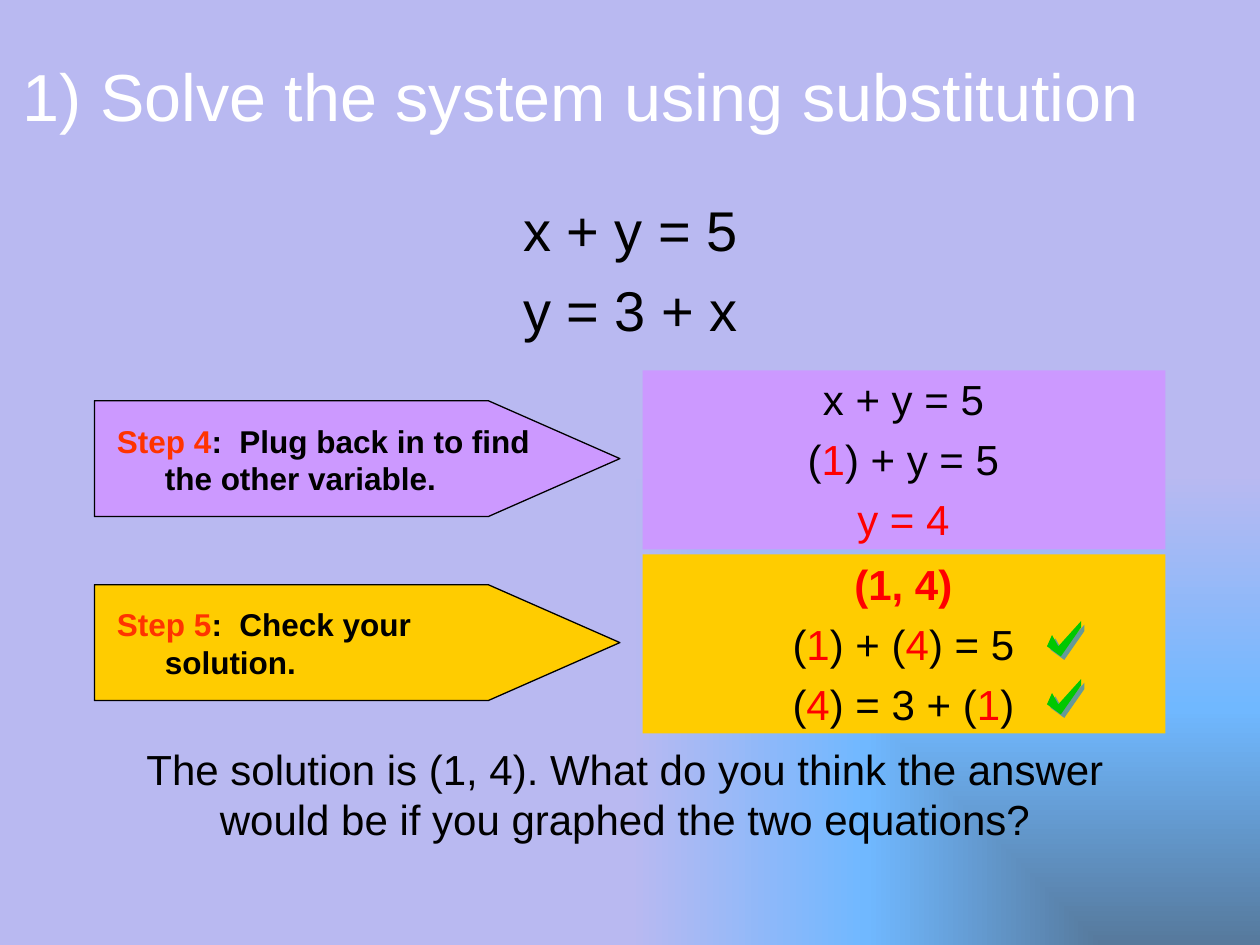
from dataclasses import dataclass

from lxml import etree
from pptx import Presentation
from pptx import util as u
from pptx.dml.color import RGBColor
from pptx.enum import shapes, text
from pptx.oxml.ns import qn

COLORS = {
    "black": "000000", "white": "FFFFFF", "red": "FF0000", "orange": "FF3300",
    "purple": "CC99FF", "gold": "FFCC00", "green": "00C800", "shadow": "669999",
    "slate": "56799C", "sky": "70B8FF", "lilac": "B9B9F1",
}
CHECK = [(0.04, 0.11), (0, 0.2), (0.11, 0.28), (0.27, 0.05), (0.27, 0), (0.09, 0.2)]
MIDDLE = text.MSO_ANCHOR.MIDDLE
TOP = text.MSO_ANCHOR.TOP
CENTER = text.PP_ALIGN.CENTER
LEFT = text.PP_ALIGN.LEFT


@dataclass
class Run:
    words: str
    color: str = "black"
    bold: bool = False


@dataclass
class TextBlock:
    box: tuple[float, float, float, float]
    lines: list[list[Run]]
    size: float
    anchor: text.MSO_ANCHOR = MIDDLE
    align: text.PP_ALIGN = CENTER
    indent: float = 0
    spaced: bool = False


@dataclass
class Step:
    top: float
    color: str
    label: str
    action: str
    work: TextBlock


def rgb(name: str) -> RGBColor:
    """Return the named colour."""
    return RGBColor.from_string(COLORS[name])


def inches(values: tuple) -> list[u.Length]:
    """Convert numbers to lengths."""
    return [u.Inches(v) for v in values]


def apply(target: object, values: dict) -> None:
    """Set each attribute of the target."""
    for name, value in values.items():
        setattr(target, name, value)


def color_node(parent: etree._Element, name: str) -> None:
    """Append a colour element."""
    etree.SubElement(parent, qn("a:srgbClr"), val=COLORS[name])


def add_background(s) -> None:
    """Fill the background with a gradient from the bottom right corner."""
    s.background.fill.gradient()
    grad = s.element.find(".//" + qn("a:gradFill"))
    for child in list(grad):
        grad.remove(child)
    stops = etree.SubElement(grad, qn("a:gsLst"))
    for pos, name in ((0, "slate"), (50, "sky"), (100, "lilac")):
        color_node(etree.SubElement(stops, qn("a:gs"), pos=str(pos * 1000)), name)
    rect = etree.SubElement(grad, qn("a:path"), {"path": "rect"})
    etree.SubElement(rect, qn("a:fillToRect"), l="100000", t="100000")


def add_text(s, block: TextBlock) -> None:
    """Add a text box with formatted runs."""
    tf = s.shapes.add_textbox(*inches(block.box)).text_frame
    apply(tf, {"word_wrap": True, "vertical_anchor": block.anchor})
    for i, line in enumerate(block.lines):
        p = tf.paragraphs[0] if i == 0 else tf.add_paragraph()
        space = u.Pt(round(block.size * 0.23, 1)) if block.spaced else u.Pt(0)
        apply(p, {"alignment": block.align, "space_before": space})
        if block.indent:
            pPr = p._p.get_or_add_pPr()
            pPr.set("marL", str(u.Inches(block.indent)))
            pPr.set("indent", str(-u.Inches(block.indent)))
        for run in line:
            r = p.add_run()
            r.text = run.words
            apply(r.font, {"name": "Arial", "size": u.Pt(block.size), "bold": run.bold})
            r.font.color.rgb = rgb(run.color)


def paint(sp, color: str, outlined: bool = False) -> None:
    """Give a shape a flat fill and an optional black outline."""
    sp.shadow.inherit = False
    sp.fill.solid()
    sp.fill.fore_color.rgb = rgb(color)
    if outlined:
        sp.line.color.rgb = rgb("black")
        sp.line.width = u.Pt(0.75)
    else:
        sp.line.fill.background()


def add_step(s, step: Step) -> None:
    """Draw a step arrow and its panel of working."""
    arrow = s.shapes.add_shape(
        shapes.MSO_SHAPE.PENTAGON, *inches((0.75, step.top + 0.25, 4.17, 0.92)))
    arrow.adjustments[0] = 1.136
    paint(arrow, step.color, outlined=True)
    runs = [Run(step.label, "orange", True), Run(step.action, bold=True)]
    add_text(s, TextBlock((0.83, step.top + 0.34, 3.58, 0.75), [runs], 18,
                          align=LEFT, indent=0.38))
    panel = s.shapes.add_shape(
        shapes.MSO_SHAPE.RECTANGLE, *inches((5.1, step.top + 0.01, 4.15, 1.42)))
    paint(panel, step.color)
    add_text(s, step.work)


def add_check(s, left: float, top: float) -> None:
    """Draw a check mark with a hard shadow."""
    points = [(u.Inches(left + x), u.Inches(top + y)) for x, y in CHECK]
    builder = s.shapes.build_freeform(*points[0])
    builder.add_line_segments(points[1:], close=True)
    sp = builder.convert_to_shape()
    paint(sp, "green")
    effects = sp.element.spPr.find(qn("a:effectLst"))
    shadow = etree.SubElement(effects, qn("a:outerShdw"), dist=str(u.Pt(2.8)),
                              dir="2700000", algn="ctr", rotWithShape="0")
    color_node(shadow, "shadow")


def main() -> None:
    """Build the slide."""
    prs = Presentation()
    apply(prs, {"slide_width": u.Inches(10), "slide_height": u.Inches(7.5)})
    s = prs.slides.add_slide(prs.slide_layouts[6])
    add_background(s)

    one, four = Run("1", "red"), Run("4", "red")
    add_text(s, TextBlock((0.08, 0.25, 9.08, 1),
                          [[Run("1) Solve the system using substitution", "white")]],
                          38, align=LEFT))
    add_text(s, TextBlock((0.67, 1.5, 8.67, 5.08),
                          [[Run("x + y = 5")], [Run("y = 3 + x")]],
                          32, anchor=TOP, indent=0.38, spaced=True))
    plug_in = [
        [Run("x + y = 5")],
        [Run("("), one, Run(") + y = 5")],
        [Run("y = 4", "red")],
    ]
    check = [
        [Run("(1, 4)", "red", True)],
        [Run("("), one, Run(") + ("), four, Run(") = 5")],
        [Run("("), four, Run(") = 3 + ("), one, Run(")")],
    ]
    steps = [
        Step(2.93, "purple", "Step 4", ":  Plug back in to find the other variable.",
             TextBlock((5.17, 2.93, 4, 1.42), plug_in, 24, indent=0.67, spaced=True)),
        Step(4.39, "gold", "Step 5", ":  Check your solution.",
             TextBlock((5.17, 4.48, 4, 1.25), check, 24, indent=0.38, spaced=True)),
    ]
    for step in steps:
        add_step(s, step)
    for top in (4.93, 5.39):
        add_check(s, 8.31, top)
    add_text(s, TextBlock((0.75, 5.85, 8.42, 0.9),
                          [[Run("The solution is (1, 4). What do you think the answer "
                                "would be if you graphed the two equations?")]],
                          24, anchor=TOP))
    prs.save("out.pptx")


if __name__ == "__main__":
    main()
